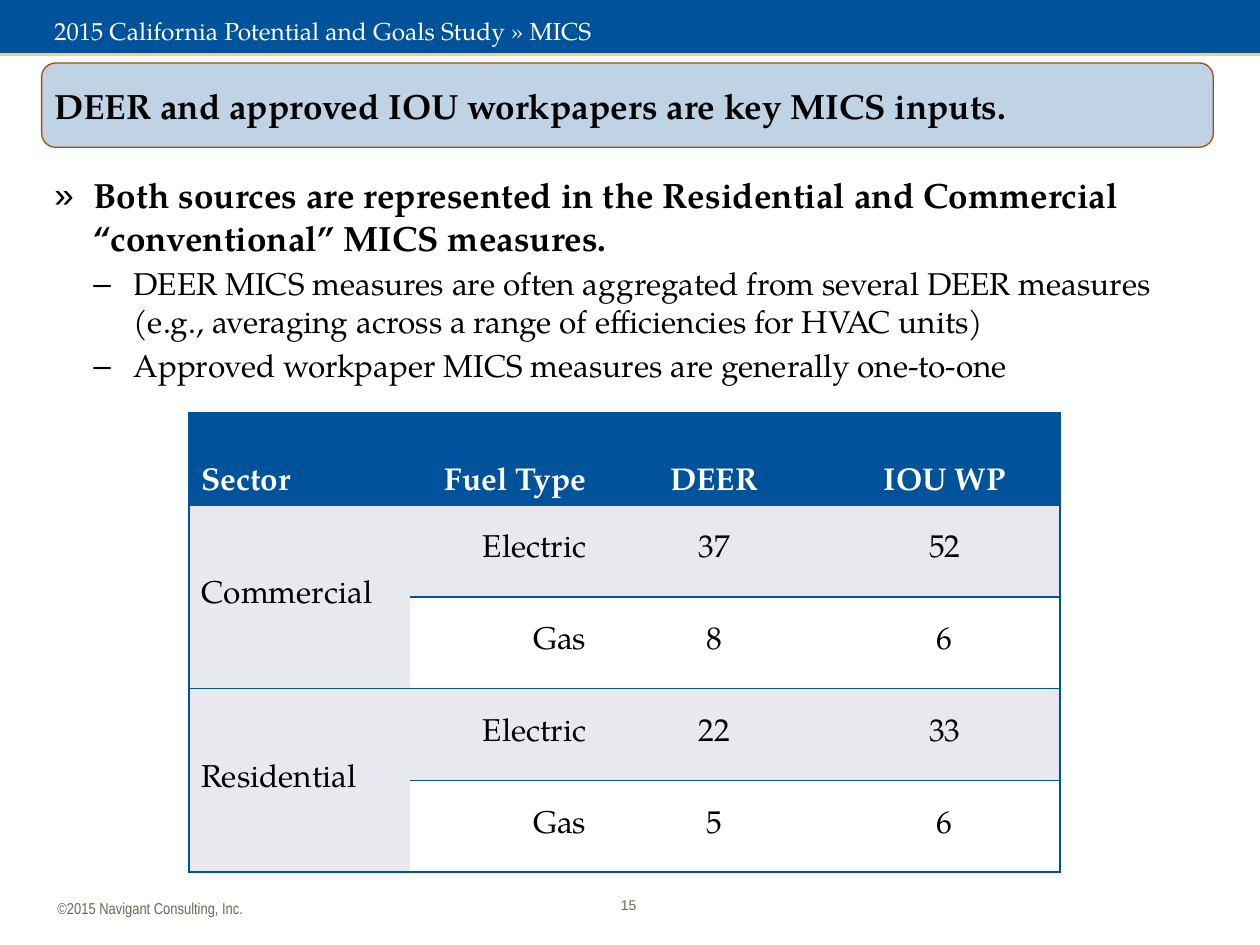
from lxml import etree
from pptx import Presentation
from pptx import util as u
from pptx.dml.color import RGBColor
from pptx.enum import shapes, text
from pptx.oxml import ns

COLORS = {"navy": "00539B", "gold": "F5D070", "rust": "A84B0C", "band": "E7E9EF",
          "white": "FFFFFF", "black": "000000", "taupe": "6F6754"}
SERIF = "TeX Gyre Pagella"
LEFT, CENTER, RIGHT = text.PP_ALIGN.LEFT, text.PP_ALIGN.CENTER, text.PP_ALIGN.RIGHT
TOP, MIDDLE, BOTTOM = text.MSO_ANCHOR.TOP, text.MSO_ANCHOR.MIDDLE, text.MSO_ANCHOR.BOTTOM

STUDY = "2015 California Potential and Goals Study » MICS"
HEADLINE = "DEER and approved IOU workpapers are key MICS inputs."
POINTS = [
    (0, "Both sources are represented in the Residential and Commercial “conventional” MICS measures."),
    (1, "DEER MICS measures are often aggregated from several DEER measures "
        "(e.g., averaging across a range of efficiencies for HVAC units)"),
    (1, "Approved workpaper MICS measures are generally one-to-one"),
]
LEVELS = [
    {"bullet": "»", "margin": 0.79, "hang": 0.79, "size": 20, "bold": True, "before": 8},
    {"bullet": "–", "margin": 1.6, "hang": 0.81, "size": 18, "bold": False, "before": 3.6},
]
COLUMNS = [("Sector", 4.45, LEFT), ("Fuel Type", 3.81, RIGHT),
           ("DEER", 4.65, CENTER), ("IOU WP", 4.65, CENTER)]
COUNTS = [
    ("Commercial", "Electric", "37", "52"),
    ("", "Gas", "8", "6"),
    ("Residential", "Electric", "22", "33"),
    ("", "Gas", "5", "6"),
]
ROW_HEIGHT = 1.85
BAR_HEIGHT = 1.07
HEADLINE_BOX = (0.84, 1.27, 23.62, 1.7)


def rgb(name):
    return RGBColor.from_string(COLORS[name])


def cm(box):
    return [u.Cm(value) for value in box]


def add(parent, tag, **attributes):
    return etree.SubElement(parent, ns.qn(tag), attributes)


def style(paragraph, size, color, bold=False, face=SERIF, align=LEFT):
    paragraph.alignment = align
    for run in paragraph.runs:
        run.font.size, run.font.bold, run.font.name = u.Pt(size), bold, face
        run.font.color.rgb = rgb(color)


def place(holder, box, anchor=TOP):
    holder.left, holder.top, holder.width, holder.height = cm(box)
    frame = holder.text_frame
    frame.word_wrap, frame.vertical_anchor = True, anchor
    frame.auto_size = text.MSO_AUTO_SIZE.NONE
    holder.element.getparent().append(holder.element)
    return frame


def add_panel(slide, kind, box):
    panel = slide.shapes.add_shape(kind, *cm(box))
    panel.shadow.inherit = False
    panel.fill.solid()
    panel.fill.fore_color.rgb = rgb("navy")
    return panel


def add_note(slide, words, box, size, face, align=LEFT, inset=0.13):
    frame = slide.shapes.add_textbox(*cm(box)).text_frame
    frame.word_wrap = True
    frame.margin_top = frame.margin_bottom = u.Cm(inset)
    frame.text = words
    style(frame.paragraphs[0], size, "taupe", face=face, align=align)


def add_backdrop(slide):
    rule = slide.shapes.add_connector(shapes.MSO_CONNECTOR.STRAIGHT,
                                      *cm((25.4, BAR_HEIGHT, 0, BAR_HEIGHT)))
    rule.line.color.rgb, rule.line.width = rgb("gold"), u.Pt(3)
    add(rule.element.spPr, "a:effectLst")
    add_note(slide, "15", (12.04, 17.91, 1.27, 0.84), 8, "Arial", CENTER, 0.25)
    add_note(slide, "©2015 Navigant Consulting, Inc.", (0.91, 17.98, 9.68, 0.64), 9, "Arial Narrow")
    bar = add_panel(slide, shapes.MSO_SHAPE.RECTANGLE, (0, 0, 25.4, BAR_HEIGHT))
    bar.line.fill.background()
    banner = add_panel(slide, shapes.MSO_SHAPE.ROUNDED_RECTANGLE, HEADLINE_BOX)
    banner.line.color.rgb, banner.line.width = rgb("rust"), u.Pt(0.75)
    tint = banner.element.spPr.find(".//" + ns.qn("a:srgbClr"))
    add(tint, "a:alpha", val="25000")


def fill_points(frame):
    for index, (level, words) in enumerate(POINTS):
        look = LEVELS[level]
        point = frame.add_paragraph() if index else frame.paragraphs[0]
        point.text, point.level = words, level
        point.space_before = u.Pt(look["before"] if index else 0)
        properties = point._p.get_or_add_pPr()
        properties.set("marL", str(u.Cm(look["margin"])))
        properties.set("indent", str(-u.Cm(look["hang"])))
        add(properties, "a:buChar", char=look["bullet"])
        style(point, look["size"], "black", look["bold"])


def draw_borders(cell, column):
    visible = {"L": column == 0, "R": column == len(COLUMNS) - 1, "T": True, "B": True}
    for side, shown in visible.items():
        edge = add(cell._tc.get_or_add_tcPr(), "a:ln" + side, w=str(u.Pt(1)))
        if shown:
            add(add(edge, "a:solidFill"), "a:srgbClr", val=COLORS["navy"])
        else:
            add(edge, "a:noFill")


def add_counts(slide):
    names, widths, aligns = zip(*COLUMNS)
    rows = [names] + COUNTS
    box = (3.81, 8.33, sum(widths), ROW_HEIGHT * len(rows))
    table = slide.shapes.add_table(len(rows), len(names), *cm(box)).table
    table.first_row = table.horz_banding = False
    for column, width in zip(table.columns, widths):
        column.width = u.Cm(width)
    for row in table.rows:
        row.height = u.Cm(ROW_HEIGHT)
    for first in range(1, len(rows), 2):
        table.cell(first, 0).merge(table.cell(first + 1, 0))
    for r, values in enumerate(rows):
        header = r == 0
        for c, value in enumerate(values):
            cell = table.cell(r, c)
            if cell.is_spanned:
                continue
            draw_borders(cell, c)
            cell.fill.solid()
            cell.fill.fore_color.rgb = rgb("navy" if header else "band" if r % 2 else "white")
            cell.vertical_anchor = BOTTOM if header else MIDDLE
            cell.text = value
            style(cell.text_frame.paragraphs[0], 18, "white" if header else "black",
                  header, align=aligns[c])


def main():
    deck = Presentation()
    deck.slide_width, deck.slide_height = u.Cm(25.4), u.Cm(19.05)
    slide = deck.slides.add_slide(deck.slide_layouts[3])
    study, headline, points = slide.placeholders
    add_backdrop(slide)

    banner = place(headline, HEADLINE_BOX, MIDDLE)
    banner.text = HEADLINE
    claim = banner.paragraphs[0]
    claim.space_before = u.Pt(0)
    properties = claim._p.get_or_add_pPr()
    properties.set("marL", "0")
    properties.set("indent", "0")
    add(properties, "a:buNone")
    style(claim, 20, "black", True)

    heading = place(study, (0.84, 0.2, 23.62, 0.64))
    heading.text = STUDY
    style(heading.paragraphs[0], 14, "white")

    add_counts(slide)
    fill_points(place(points, (0.84, 3.38, 23.7, 4.45)))
    deck.save("out.pptx")


if __name__ == "__main__":
    main()
